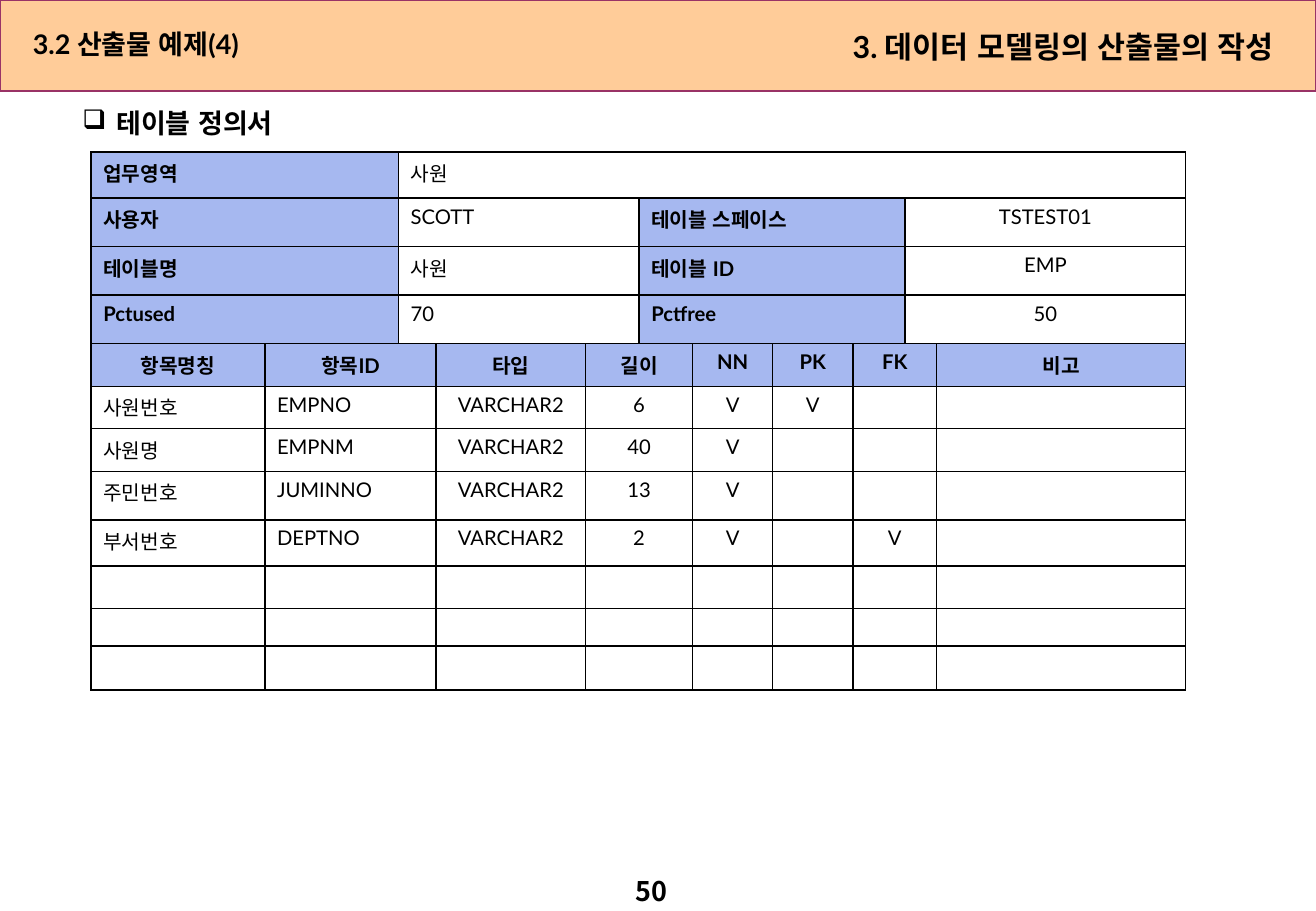
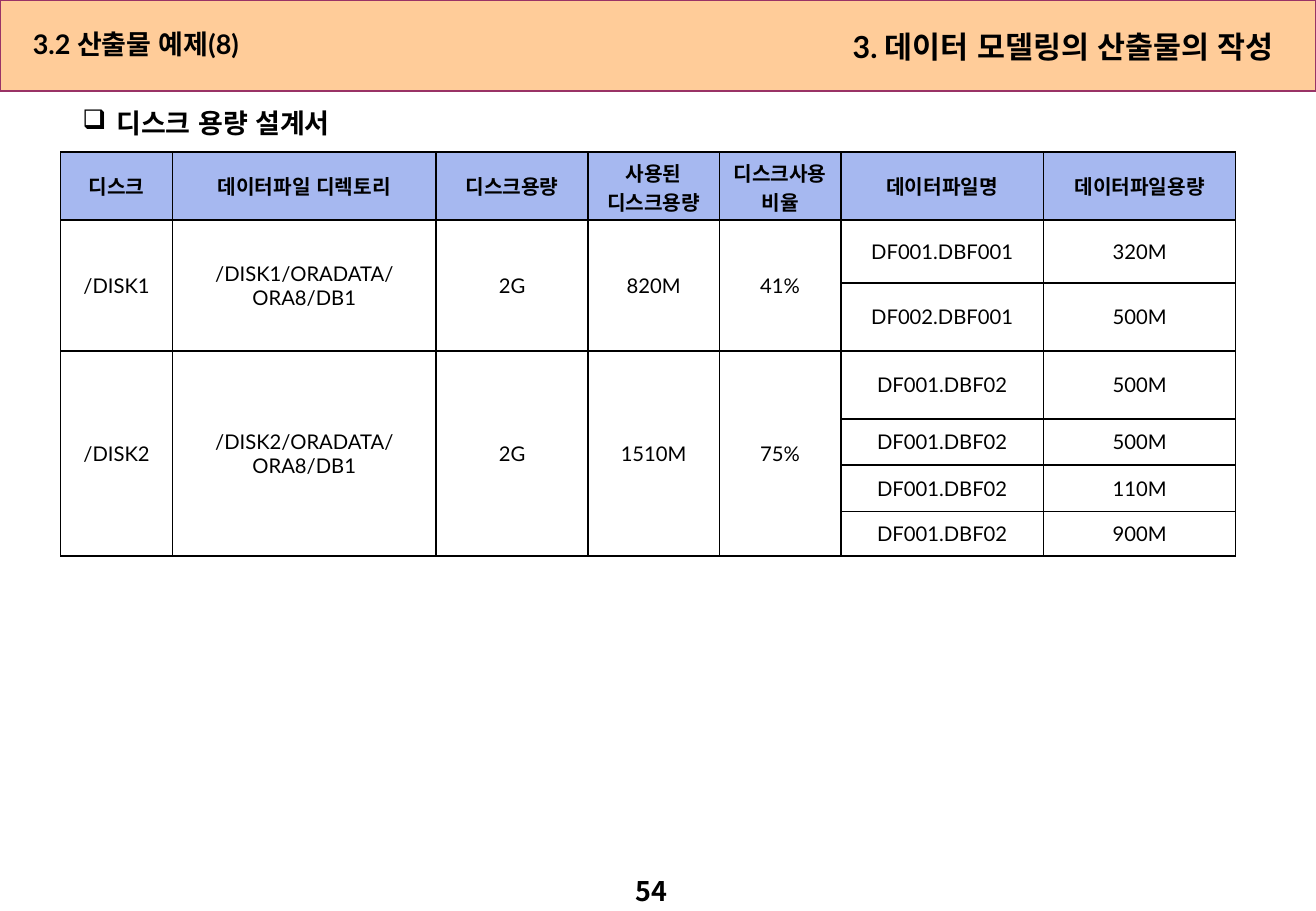
from dataclasses import dataclass
from typing import Any

from pptx import Presentation
from pptx.dml.color import RGBColor
from pptx.enum.lang import MSO_LANGUAGE_ID
from pptx.enum.shapes import MSO_SHAPE
from pptx.enum.text import MSO_ANCHOR, MSO_AUTO_SIZE, PP_ALIGN
from pptx.oxml import parse_xml
from pptx.oxml.ns import nsdecls
from pptx.util import Inches, Pt

# Shared look
BAND, BAND_LINE, LABEL = "FFCC99", "993366", "A6B8F0"
BLACK, WHITE = "000000", "FFFFFF"
LATIN, KOREAN = "Lato", "Noto Sans CJK KR"
CHAPTER = "3. 데이터 모델링의 산출물의 작성"
HEADING = {"name": LATIN, "size": Pt(16), "bold": True}
CHAPTER_FONT = HEADING | {"size": Pt(18)}
NUMBER_FONT = HEADING | {"name": KOREAN}
CELL_FONT = {"name": LATIN, "size": Pt(12), "bold": False}
LABEL_FONT = CELL_FONT | {"bold": True}


@dataclass
class Block:
    """A table cell, possibly spanning several rows or columns."""
    row: int
    column: int
    text: str = ""
    rows: int = 1
    columns: int = 1
    label: bool = False
    centered: bool = True


@dataclass
class Grid:
    left: float
    widths: list[float]
    heights: list[float]
    blocks: list[Block]
    anchor: MSO_ANCHOR


def colour(value: str) -> RGBColor:
    return RGBColor.from_string(value)


def write(para: Any, text: str, formats: dict[str, Any]) -> None:
    span = para.add_run()
    span.text = text
    for name, value in formats.items():
        setattr(span.font, name, value)
    span.font.color.rgb = colour(BLACK)
    span.font.language_id = MSO_LANGUAGE_ID.KOREAN
    span.font._element.append(
        parse_xml(f'<a:ea {nsdecls("a")} typeface="{KOREAN}"/>'))


def format_box(box: Any, place: tuple[float, ...], text: str,
               formats: dict[str, Any], align: PP_ALIGN = PP_ALIGN.LEFT,
               wrap: bool = True) -> Any:
    for name, value in zip(("left", "top", "width", "height"), place):
        setattr(box, name, Inches(value))
    frame_formats = {"word_wrap": wrap, "vertical_anchor": MSO_ANCHOR.TOP,
                     "auto_size": MSO_AUTO_SIZE.SHAPE_TO_FIT_TEXT}
    for name, value in frame_formats.items():
        setattr(box.text_frame, name, value)
    para = box.text_frame.paragraphs[0]
    para.alignment = align
    write(para, text, formats)
    return para


def add_bullet(para: Any) -> None:
    properties = para._p.get_or_add_pPr()
    properties.set("marL", str(Inches(0.28)))
    properties.set("indent", str(Inches(-0.28)))
    properties.append(parse_xml(f'<a:buChar {nsdecls("a")} char="❑"/>'))


def add_page(deck: Any, title: str, subject: str, number: int) -> Any:
    page = deck.slides.add_slide(deck.slide_layouts[5])
    shapes = page.shapes

    # Band behind the title
    band = shapes.add_shape(MSO_SHAPE.RECTANGLE, 0, 0,
                            deck.slide_width, Inches(0.75))
    band.shadow.inherit = False
    band.fill.solid()
    band.fill.fore_color.rgb = colour(BAND)
    band.line.color.rgb = colour(BAND_LINE)
    band.line.width = Pt(0.75)
    shapes._spTree.insert(2, band._element)

    # Title, chapter, subject and page number
    def new_box() -> Any:
        return shapes.add_textbox(0, 0, 0, 0)

    format_box(shapes.title, (0.17, 0.18, 5.17, 0.37), title, HEADING)
    format_box(new_box(), (5.83, 0.18, 4.75, 0.4), CHAPTER, CHAPTER_FONT,
               PP_ALIGN.RIGHT)
    add_bullet(format_box(new_box(), (0.58, 0.83, 3.42, 0.37), subject, HEADING))
    format_box(new_box(), (5.13, 7.15, 0.52, 0.37), str(number), NUMBER_FONT,
               wrap=False)
    return page


def add_borders(cell: Any) -> None:
    properties = cell._tc.get_or_add_tcPr()
    for side in ("lnL", "lnR", "lnT", "lnB"):
        properties.append(parse_xml(
            f'<a:{side} {nsdecls("a")} w="{Pt(1)}"><a:solidFill>'
            f'<a:srgbClr val="{BLACK}"/></a:solidFill></a:{side}>'))


def add_grid(page: Any, grid: Grid) -> None:
    table = page.shapes.add_table(
        len(grid.heights), len(grid.widths), Inches(grid.left), Inches(1.25),
        Inches(sum(grid.widths)), Inches(sum(grid.heights))).table
    table.first_row = table.horz_banding = False
    for column, width in zip(table.columns, grid.widths):
        column.width = Inches(width)
    for row, height in zip(table.rows, grid.heights):
        row.height = Inches(height)
    for cell in table.iter_cells():
        add_borders(cell)
        cell.fill.solid()
        cell.fill.fore_color.rgb = colour(WHITE)
        cell.text_frame.paragraphs[0]._p.get_or_add_endParaRPr().set("sz", "1200")

    for block in grid.blocks:
        cell = table.cell(block.row, block.column)
        if block.rows * block.columns > 1:
            cell.merge(table.cell(block.row + block.rows - 1,
                                  block.column + block.columns - 1))
        cell.vertical_anchor = grid.anchor
        if block.label:
            cell.fill.fore_color.rgb = colour(LABEL)
        if block.text:
            para = cell.text_frame.paragraphs[0]
            para.alignment = PP_ALIGN.CENTER if block.centered else PP_ALIGN.LEFT
            write(para, block.text, LABEL_FONT if block.label else CELL_FONT)


def definition_blocks() -> list[Block]:
    """Label and value pairs, then the column list of the table."""
    pairs = [
        ("업무영역", "사원"),
        ("사용자", "SCOTT", "테이블 스페이스", "TSTEST01"),
        ("테이블명", "사원", "테이블 ID", "EMP"),
        ("Pctused", "70", "Pctfree", "50"),
    ]
    items = [
        ("항목명칭", "항목ID", "타입", "길이", "NN", "PK", "FK", "비고"),
        ("사원번호", "EMPNO", "VARCHAR2", "6", "V", "V", "", ""),
        ("사원명", "EMPNM", "VARCHAR2", "40", "V", "", "", ""),
        ("주민번호", "JUMINNO", "VARCHAR2", "13", "V", "", "", ""),
        ("부서번호", "DEPTNO", "VARCHAR2", "2", "V", "", "V", ""),
    ] + [("",) * 8] * 3
    item_spans = (1, 2, 1, 2, 1, 1, 2, 1)
    blocks = []
    for row, texts in enumerate(pairs + items):
        paired = row < len(pairs)
        header = row == len(pairs)
        pair_spans = (2, 9) if len(texts) == 2 else (2, 3, 4, 2)
        spans = pair_spans if paired else item_spans
        for index, (text, span) in enumerate(zip(texts, spans)):
            blocks.append(Block(
                row, sum(spans[:index]), text, columns=span,
                label=header or (paired and index % 2 == 0),
                centered=header or index >= (3 if paired else 2)))
    return blocks


def disk_blocks() -> list[Block]:
    """A header row, then each disk beside its data files."""
    headers = ("디스크", "데이터파일 디렉토리", "디스크용량", "사용된 디스크용량",
               "디스크사용비율", "데이터파일명", "데이터파일용량")
    disks = [
        (("/DISK1", "/DISK1/ORADATA/ORA8/DB1", "2G", "820M", "41%"),
         [("DF001.DBF001", "320M"), ("DF002.DBF001", "500M")]),
        (("/DISK2", "/DISK2/ORADATA/ORA8/DB1", "2G", "1510M", "75%"),
         [("DF001.DBF02", size) for size in ("500M", "500M", "110M", "900M")]),
    ]
    blocks = [Block(0, column, text, label=True)
              for column, text in enumerate(headers)]
    row = 1
    for facts, files in disks:
        blocks += [Block(row, column, text, rows=len(files))
                   for column, text in enumerate(facts)]
        for file in files:
            blocks += [Block(row, column, text)
                       for column, text in enumerate(file, len(facts))]
            row += 1
    return blocks


def main() -> None:
    deck = Presentation()
    deck.slide_width, deck.slide_height = Inches(10.83), Inches(7.5)

    # Table definition
    page = add_page(deck, "3.2 산출물 예제(4)", "테이블 정의서", 50)
    add_grid(page, Grid(
        0.75,
        [1.43, 1.1, 0.31, 1.23, 0.44, 0.44, 0.66, 0.66, 0.43, 0.26, 2.05],
        [0.38, 0.4, 0.4, 0.4, 0.35, 0.35, 0.35, 0.4, 0.38, 0.35, 0.31, 0.36],
        definition_blocks(), MSO_ANCHOR.TOP))

    # Disk capacity plan
    page = add_page(deck, "3.2 산출물 예제(8)", "디스크 용량 설계서", 54)
    add_grid(page, Grid(
        0.5,
        [0.92, 2.17, 1.25, 1.08, 1, 1.67, 1.58],
        [0.56, 0.52, 0.56, 0.56, 0.38, 0.38, 0.37],
        disk_blocks(), MSO_ANCHOR.MIDDLE))

    deck.save("out.pptx")


if __name__ == "__main__":
    main()
